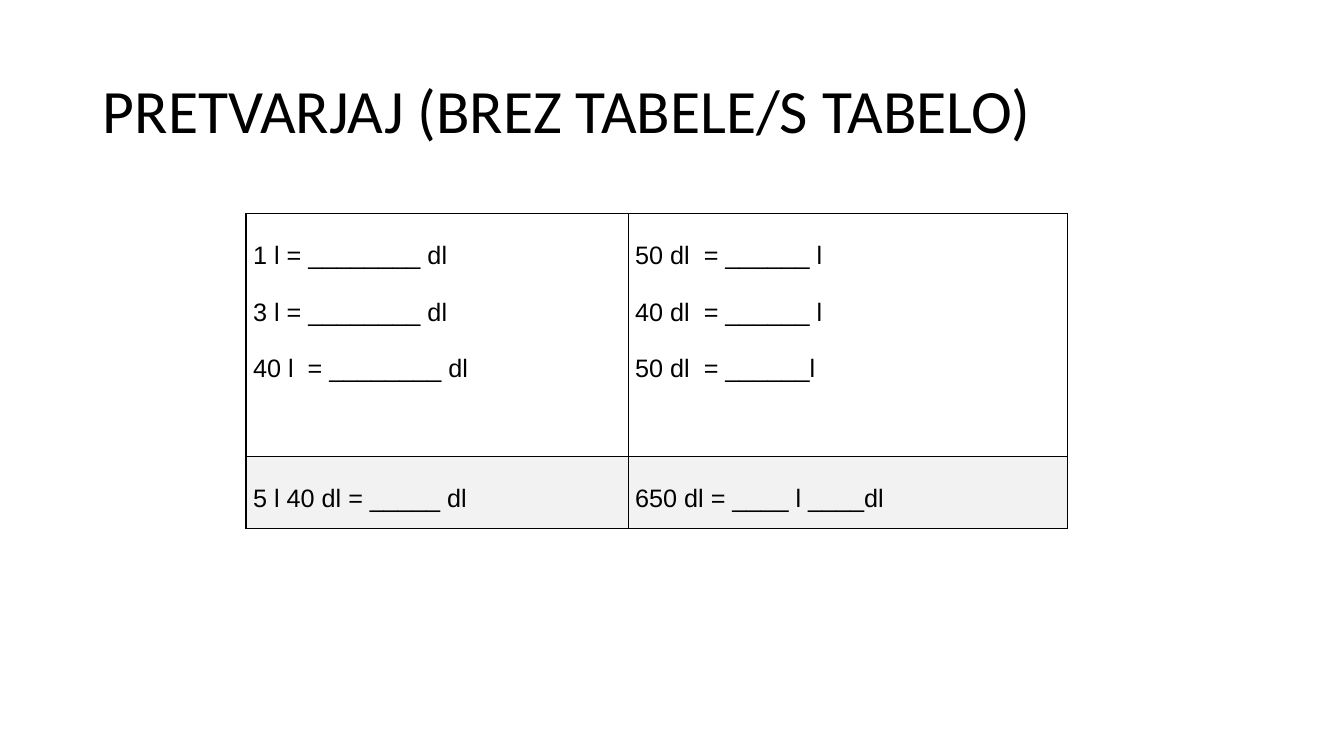
"""Build a slide with a table of litre and decilitre conversion exercises."""
import dataclasses

import lxml.etree
import pptx
import pptx.dml.color
import pptx.enum.text
import pptx.oxml.ns
import pptx.util

Inches = pptx.util.Inches


@dataclasses.dataclass(frozen=True)
class Theme:
    black: str = "000000"
    white: str = "FFFFFF"
    grey: str = "F2F2F2"
    title_font: str = "Calibri"
    body_font: str = "Arial"
    title_size: int = 44
    body_size: int = 18
    border_width: int = 1


class SlideBuilder:
    def __init__(self, slide, theme):
        self.slide = slide
        self.theme = theme

    def apply(self, target, values):
        for name, value in values.items():
            setattr(target, name, value)

    def format_text(self, text_frame, font, size, spacing):
        paragraph_format = {
            "line_spacing": spacing,
            "space_before": pptx.util.Pt(0),
            "alignment": pptx.enum.text.PP_ALIGN.LEFT,
        }
        font_format = {"name": font, "size": pptx.util.Pt(size), "bold": False}
        for paragraph in text_frame.paragraphs:
            self.apply(paragraph, paragraph_format)
            for run in paragraph.runs:
                self.apply(run.font, font_format)
                run.font.color.rgb = pptx.dml.color.RGBColor.from_string(self.theme.black)

    def title(self, text, left, top, width, height):
        shape = self.slide.shapes.title
        self.apply(shape, {
            "left": Inches(left), "top": Inches(top),
            "width": Inches(width), "height": Inches(height),
        })
        self.apply(shape.text_frame, {
            "text": text,
            "word_wrap": True,
            "auto_size": pptx.enum.text.MSO_AUTO_SIZE.NONE,
            "vertical_anchor": pptx.enum.text.MSO_ANCHOR.MIDDLE,
        })
        self.format_text(shape.text_frame, self.theme.title_font, self.theme.title_size, 0.9)

    def border(self, cell):
        qualify = pptx.oxml.ns.qn
        properties = cell._tc.get_or_add_tcPr()
        for position, side in enumerate(("a:lnL", "a:lnR", "a:lnT", "a:lnB")):
            line = lxml.etree.Element(qualify(side), w=str(pptx.util.Pt(self.theme.border_width)))
            fill = lxml.etree.SubElement(line, qualify("a:solidFill"))
            lxml.etree.SubElement(fill, qualify("a:srgbClr"), val=self.theme.black)
            properties.insert(position, line)

    def cell(self, cell, lines, fill):
        self.apply(cell, {
            "text": "\n".join(lines),
            "margin_left": Inches(0.07), "margin_right": Inches(0.07),
            "margin_top": 0, "margin_bottom": 0,
            "vertical_anchor": pptx.enum.text.MSO_ANCHOR.TOP,
        })
        cell.fill.solid()
        cell.fill.fore_color.rgb = pptx.dml.color.RGBColor.from_string(fill)
        self.format_text(cell.text_frame, self.theme.body_font, self.theme.body_size, 2.0)
        self.border(cell)

    def table(self, rows, left, top, widths, heights, fills):
        table = self.slide.shapes.add_table(
            len(rows), len(widths), Inches(left), Inches(top),
            Inches(sum(widths)), Inches(sum(heights)),
        ).table
        self.apply(table, {"first_row": False, "horz_banding": False})
        for column, width in zip(table.columns, widths):
            column.width = Inches(width)
        for row, height, contents, fill in zip(table.rows, heights, rows, fills):
            row.height = Inches(height)
            for cell, lines in zip(row.cells, contents):
                self.cell(cell, lines, fill)


def main():
    presentation = pptx.Presentation()
    presentation.slide_width = Inches(13.33)
    presentation.slide_height = Inches(7.5)
    theme = Theme()
    builder = SlideBuilder(presentation.slides.add_slide(presentation.slide_layouts[5]), theme)
    builder.title("PRETVARJAJ (BREZ TABELE/S TABELO)", 0.92, 0.4, 11.5, 1.45)
    exercises = [
        [
            ["1 l = ________ dl", "3 l = ________ dl", "40 l  = ________ dl"],
            ["50 dl  = ______ l", "40 dl  = ______ l", "50 dl  = ______l"],
        ],
        [["5 l 40 dl = _____ dl"], ["650 dl = ____ l ____dl"]],
    ]
    builder.table(exercises, 2.44, 2.12, [3.79, 4.36], [2.41, 0.71], [theme.white, theme.grey])
    presentation.save("out.pptx")


if __name__ == "__main__":
    main()
